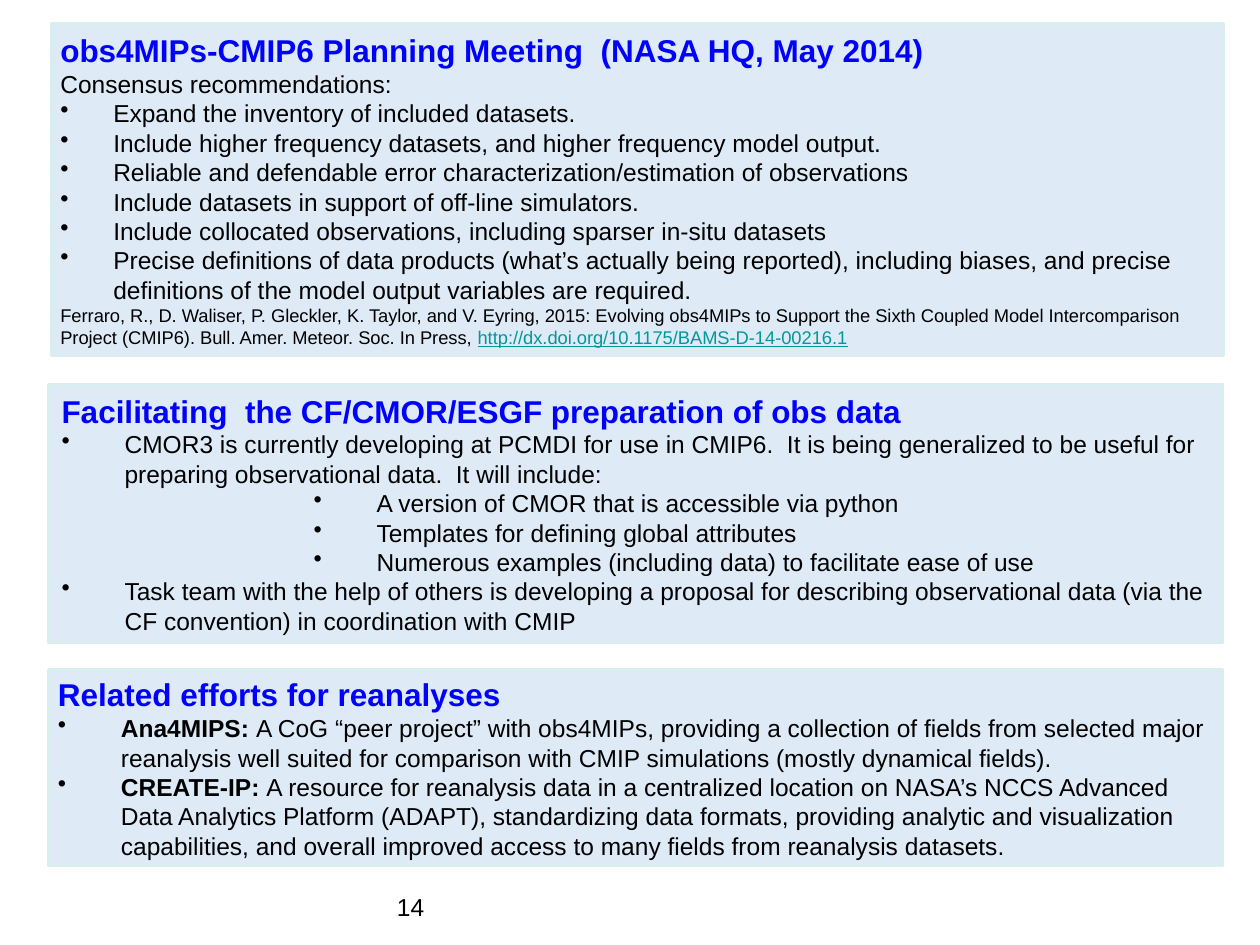
from dataclasses import dataclass

import pptx
import pptx.dml.color
import pptx.enum.shapes
import pptx.enum.text
import pptx.oxml.ns
import pptx.util
from lxml import etree

Pt = pptx.util.Pt
RGB = pptx.dml.color.RGBColor

BLUE = RGB(0x00, 0x00, 0xFF)
BLACK = RGB(0x00, 0x00, 0x00)
TEAL = RGB(0x00, 0x99, 0x99)
PALE = RGB(0xDE, 0xEB, 0xF7)
EDGE = RGB(0xDA, 0xED, 0xEF)
FONT = "Arial"


@dataclass
class Span:
    text: str
    size: float = 14
    color: RGB = BLACK
    bold: bool = False
    line: bool = False


@dataclass
class Para:
    spans: list[Span]
    left: float = 0  # text indent of a bulleted paragraph
    hang: float = 0
    level: int = 0


@dataclass
class Panel:
    left: float
    top: float
    width: float
    height: float
    paras: list[Para]
    side: float = 5
    edge: float = 2.2


def head(text: str) -> Para:
    return Para([Span(text, 18, BLUE, True)])


def item(text: str, left: float = 36, hang: float = 36,
         level: int = 0, lead: str = "") -> Para:
    spans = [Span(lead, bold=True)] if lead else []
    return Para(spans + [Span(text)], left, hang, level)


def style(run, span: Span) -> None:
    font = run.font
    font.name = FONT
    font.size = Pt(span.size)
    font.bold = span.bold
    font.underline = span.line
    font.color.rgb = span.color


def write(par, data: Para) -> None:
    par.alignment = pptx.enum.text.PP_ALIGN.LEFT
    par.level = data.level
    if data.hang:
        props = par._p.get_or_add_pPr()
        props.set("marL", str(Pt(data.left)))
        props.set("indent", str(-Pt(data.hang)))
        mark = etree.SubElement(props, pptx.oxml.ns.qn("a:buChar"))
        mark.set("char", "•")
    par.text = data.spans[0].text
    for span in data.spans[1:]:
        par.add_run().text = span.text
    for run, span in zip(par.runs, data.spans):
        style(run, span)


def fill(frame, paras: list[Para], side: float, edge: float) -> None:
    frame.word_wrap = True
    frame.margin_left = frame.margin_right = Pt(side)
    frame.margin_top = frame.margin_bottom = Pt(edge)
    for num, data in enumerate(paras):
        write(frame.add_paragraph() if num else frame.paragraphs[0], data)


def draw(slide, panel: Panel) -> None:
    box = slide.shapes.add_shape(
        pptx.enum.shapes.MSO_SHAPE.RECTANGLE, Pt(panel.left), Pt(panel.top),
        Pt(panel.width), Pt(panel.height))
    box.shadow.inherit = False
    box.fill.solid()
    box.fill.fore_color.rgb = PALE
    box.line.color.rgb = EDGE
    box.line.width = Pt(2)
    frame = box.text_frame
    fill(frame, panel.paras, panel.side, panel.edge)
    frame.vertical_anchor = pptx.enum.text.MSO_ANCHOR.MIDDLE
    frame.auto_size = pptx.enum.text.MSO_AUTO_SIZE.SHAPE_TO_FIT_TEXT


GOALS = [
    "Expand the inventory of included datasets.",
    "Include higher frequency datasets, and higher frequency model output.",
    "Reliable and defendable error characterization/estimation of observations",
    "Include datasets in support of off-line simulators.",
    "Include collocated observations, including sparser in-situ datasets",
    "Precise definitions of data products (what’s actually being reported), "
    "including biases, and precise definitions of the model output variables "
    "are required.",
]
PARTS = [
    "A version of CMOR that is accessible via python",
    "Templates for defining global attributes",
    "Numerous examples (including data) to facilitate ease of use",
]
CITE = Para([
    Span("Ferraro, R., D. Waliser, P. Gleckler, K. Taylor, and V. Eyring, 2015: "
         "Evolving obs4MIPs to Support the Sixth Coupled Model Intercomparison "
         "Project (CMIP6). Bull. Amer. Meteor. Soc. In Press, ", 10.5),
    Span("http://dx.doi.org/10.1175/BAMS-D-14-00216.1", 10.5, TEAL, line=True),
])

PANELS = [
    Panel(29.5, 13.7, 669.6, 189.4, [
        head("obs4MIPs-CMIP6 Planning Meeting  (NASA HQ, May 2014)"),
        Para([Span("Consensus recommendations:")]),
        *[item(goal, 30.24, 30.24) for goal in GOALS],
        CITE,
    ]),
    Panel(28.1, 219.6, 670.3, 147.6, [
        head("Facilitating  the CF/CMOR/ESGF preparation of obs data"),
        item("CMOR3 is currently developing at PCMDI for use in CMIP6.  It is "
             "being generalized to be useful for preparing observational data.  "
             "It will include:"),
        *[item(part, 180, level=1) for part in PARTS],
        item("Task team with the help of others is developing a proposal for "
             "describing observational data (via the CF convention) in "
             "coordination with CMIP"),
    ], side=7.2, edge=3.6),
    Panel(28.1, 383, 670.3, 111.6, [
        head("Related efforts for reanalyses"),
        item("A CoG “peer project” with obs4MIPs, providing a collection of "
             "fields from selected major reanalysis well suited for comparison "
             "with CMIP simulations (mostly dynamical fields).",
             lead="Ana4MIPS: "),
        item("A resource for reanalysis data in a centralized location on NASA’s "
             "NCCS Advanced Data Analytics Platform (ADAPT), standardizing data "
             "formats, providing analytic and visualization capabilities, and "
             "overall improved access to many fields from reanalysis datasets.",
             lead="CREATE-IP: "),
    ]),
]


def main() -> None:
    deck = pptx.Presentation()
    deck.slide_width, deck.slide_height = Pt(720), Pt(540)
    slide = deck.slides.add_slide(deck.slide_layouts[6])

    # Text panels
    for panel in PANELS:
        draw(slide, panel)

    # Page number
    page = slide.shapes.add_textbox(Pt(226.8), Pt(509.8), Pt(149.8), Pt(18))
    fill(page.text_frame, [Para([Span("14")])], 0, 0)

    deck.save("out.pptx")


if __name__ == "__main__":
    main()
